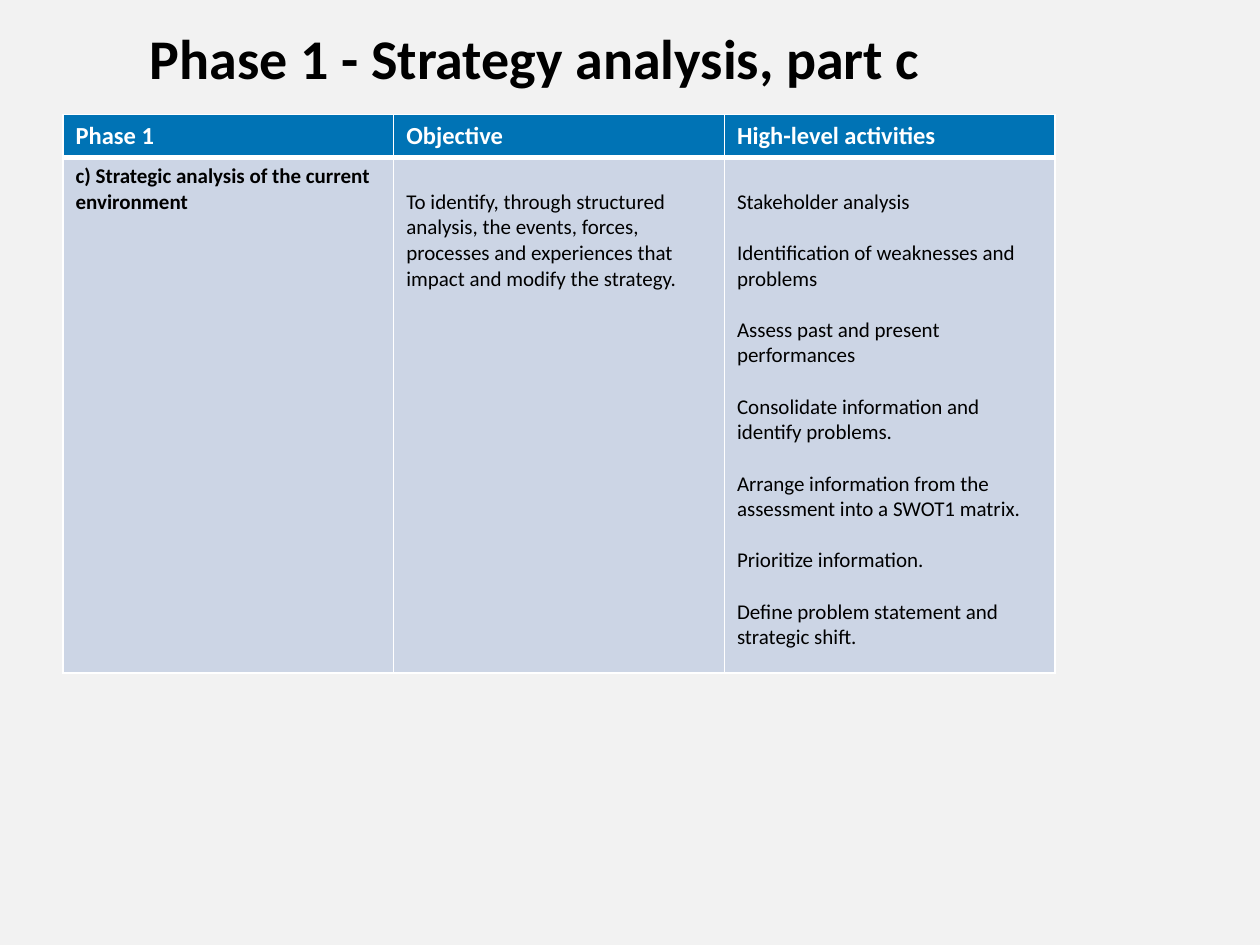
from dataclasses import dataclass

from lxml import etree
from pptx import Presentation
from pptx.dml.color import RGBColor
from pptx.enum.text import MSO_AUTO_SIZE
from pptx.oxml.ns import qn
from pptx.util import Inches, Pt

FIT = MSO_AUTO_SIZE.SHAPE_TO_FIT_TEXT
WIDE, HIGH = 10, 7.5
UNIT = 0.1  # side of one grid square, in inches


@dataclass(frozen=True)
class Theme:
    font: str = "Calibri"
    back: str = "F2F2F2"
    ink: str = "000000"
    white: str = "FFFFFF"
    head: str = "0073B5"
    body: str = "CCD5E5"
    title: int = 32
    label: int = 14
    text: int = 12
    gap: float = 14.65  # one line of body text, in points


HEADS = ["Phase 1", "Objective", "High-level activities"]
TOPIC = ["c) Strategic analysis of the current environment"]
AIM = ["To identify, through structured analysis, the events, forces, "
       "processes and experiences that impact and modify the strategy."]
TASKS = [
    "Stakeholder analysis",
    "Identification of weaknesses and problems",
    "Assess past and present performances",
    "Consolidate information and identify problems.",
    "Arrange information from the assessment into a SWOT1 matrix.",
    "Prioritize information.",
    "Define problem statement and strategic shift.",
]


def grid(*counts):
    return [Inches(n * UNIT) for n in counts]


class Page:
    def __init__(self, deck, theme):
        self.theme = theme
        self.slide = deck.slides.add_slide(deck.slide_layouts[6])
        fill = self.slide.background.fill
        fill.solid()
        fill.fore_color.rgb = RGBColor.from_string(theme.back)

    def lines(self, frame, lines, size, color, bold=False):
        for i, line in enumerate(lines):
            para = frame.paragraphs[0] if i == 0 else frame.add_paragraph()
            if i:
                para.space_before = Pt(self.theme.gap)
            run = para.add_run()
            run.text = line
            font = run.font
            font.name, font.size, font.bold = self.theme.font, Pt(size), bold
            font.color.rgb = RGBColor.from_string(color)

    def title(self, text, *box):
        frame = self.slide.shapes.add_textbox(*grid(*box)).text_frame
        frame.word_wrap = True
        frame.auto_size = FIT
        self.lines(frame, [text], self.theme.title, self.theme.ink, True)

    def table(self, left, top, width, rows, count):
        """Add an empty table with equal columns and the given row heights."""
        box = grid(left, top, width, sum(rows))
        table = self.slide.shapes.add_table(len(rows), count, *box).table
        for row, high in zip(table.rows, grid(*rows)):
            row.height = high
        return table

    def edge(self, cell, **widths):
        """Draw the cell's sides (L, R, T, B) in white, widths in points."""
        for side, width in widths.items():
            line = etree.SubElement(cell._tc.get_or_add_tcPr(),
                                    qn(f"a:ln{side}"), w=str(Pt(width)))
            fill = etree.SubElement(line, qn("a:solidFill"))
            etree.SubElement(fill, qn("a:srgbClr"), val=self.theme.white)

    def cell(self, cell, lines, fill, size, color, bold, top=1, base=1, drop=0):
        """Fill one cell; drop lowers its text by that many points."""
        self.edge(cell, L=1, R=1, T=top, B=base)
        cell.fill.solid()
        cell.fill.fore_color.rgb = RGBColor.from_string(fill)
        cell.margin_top = Inches(0.05) + Pt(drop)
        self.lines(cell.text_frame, lines, size, color, bold)


def main():
    theme = Theme()
    deck = Presentation()
    deck.slide_width, deck.slide_height = Inches(WIDE), Inches(HIGH)
    page = Page(deck, theme)

    table = page.table(5, 9.1, 78.75, [3.4, 40.9], len(HEADS))
    for col, head in enumerate(HEADS):
        page.cell(table.cell(0, col), [head], theme.head, theme.label,
                  theme.white, True, base=3)
    for col, lines in enumerate([TOPIC, AIM, TASKS]):
        first = col == 0
        page.cell(table.cell(1, col), lines, theme.body, theme.text,
                  theme.ink, first, top=3, drop=0 if first else theme.gap)

    page.title("Phase 1 - Strategy analysis, part c", 10.9, 1.4, 63.6, 6.4)
    deck.save("out.pptx")


if __name__ == "__main__":
    main()
